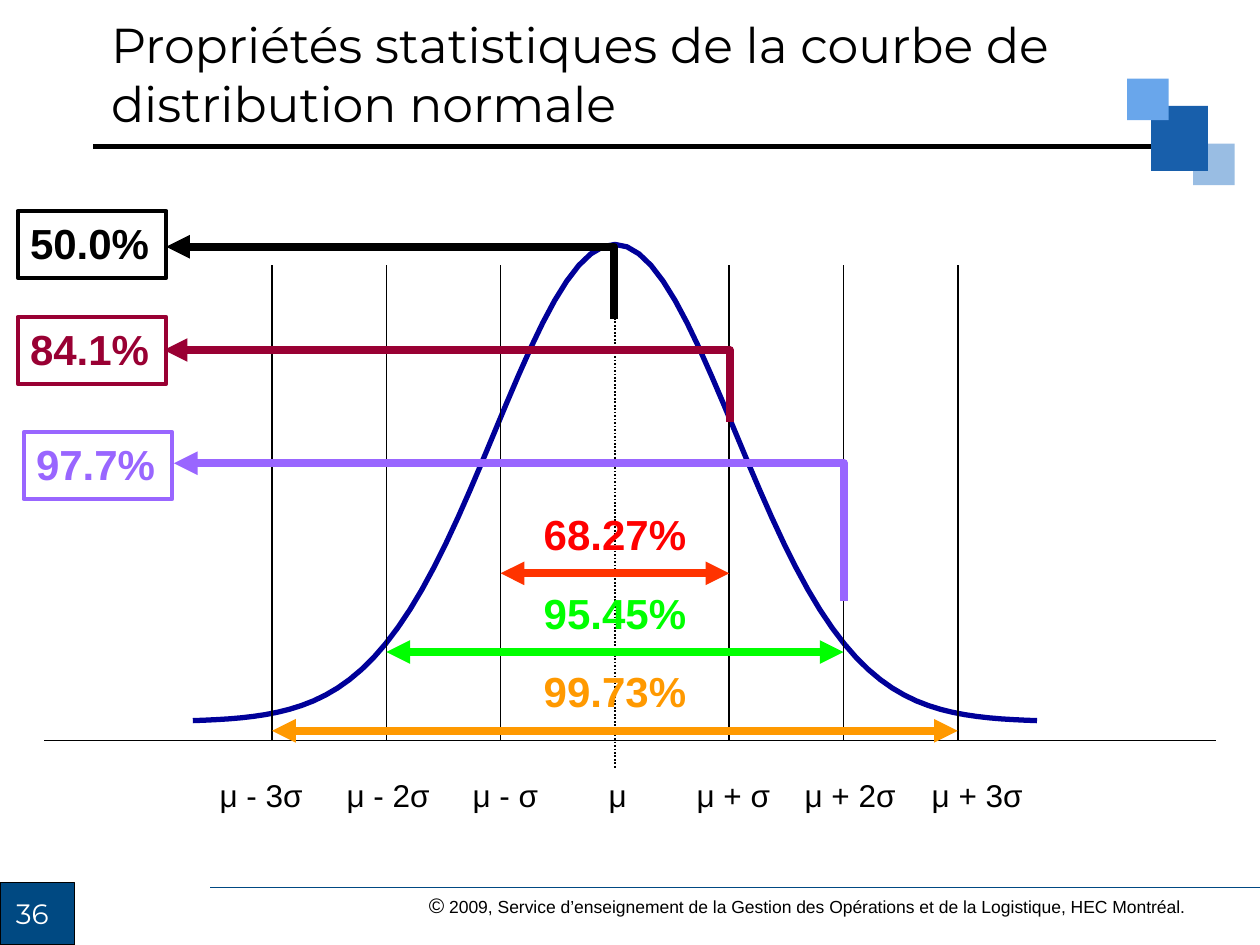
from dataclasses import dataclass
from math import exp

from lxml.etree import SubElement
from pptx import Presentation
from pptx.dml.color import RGBColor
from pptx.enum.dml import MSO_LINE
from pptx.enum.shapes import MSO_CONNECTOR, MSO_SHAPE
from pptx.enum.text import MSO_ANCHOR, PP_ALIGN
from pptx.oxml.ns import qn
from pptx.util import Pt

BLACK = "000000"
NAVY = "004982"
MEAN = 351.4        # horizontal place of the mean
SIGMA = 65.3        # gap between two grid lines
AXIS = 423.2        # height of the horizontal axis
Point = tuple[float, float]


@dataclass
class Block:
    left: float
    top: float
    width: float
    height: float
    color: str
    outline: str | None = None


@dataclass
class Span:
    sigmas: int
    text: str
    line_color: str
    text_color: str


@dataclass
class Callout:
    text: str
    color: str
    left: float
    top: float
    elbow: list[Point]


def rgb(color: str) -> RGBColor:
    return RGBColor.from_string(color)


def style_line(line, color: str, width: float, *arrow_ends: str) -> None:
    line.color.rgb = rgb(color)
    line.width = Pt(width)
    for end in arrow_ends:
        SubElement(line._get_or_add_ln(), qn(f"a:{end}"), type="triangle")


def add_line(shapes, start: Point, end: Point, color: str, width: float,
             *arrow_ends: str):
    line = shapes.add_connector(MSO_CONNECTOR.STRAIGHT, Pt(start[0]), Pt(start[1]),
                                Pt(end[0]), Pt(end[1]))
    style_line(line.line, color, width, *arrow_ends)
    SubElement(line._element.spPr, qn("a:effectLst"))
    return line


def add_path(shapes, points: list[Point], color: str, width: float,
             *arrow_ends: str) -> None:
    corners = [(Pt(x), Pt(y)) for x, y in points]
    builder = shapes.build_freeform(*corners[0])
    builder.add_line_segments(corners[1:], close=False)
    path = builder.convert_to_shape()
    path.shadow.inherit = False
    path.fill.background()
    style_line(path.line, color, width, *arrow_ends)


def add_rectangle(shapes, left: float, top: float, width: float, height: float):
    box = shapes.add_shape(MSO_SHAPE.RECTANGLE, Pt(left), Pt(top), Pt(width), Pt(height))
    box.shadow.inherit = False
    return box


def add_block(shapes, block: Block) -> None:
    box = add_rectangle(shapes, block.left, block.top, block.width, block.height)
    box.fill.solid()
    box.fill.fore_color.rgb = rgb(block.color)
    if block.outline:
        style_line(box.line, block.outline, 0.75)
    else:
        box.line.fill.background()


def add_run(para, text: str, size: float, color: str, font: str = "Arial",
            bold: bool = False) -> None:
    run = para.add_run()
    run.text = text
    run.font.size = Pt(size)
    run.font.name = font
    run.font.bold = bold
    run.font.color.rgb = rgb(color)


def add_text_box(shapes, left: float, top: float, width: float, height: float):
    box = shapes.add_textbox(Pt(left), Pt(top), Pt(width), Pt(height))
    box.text_frame.word_wrap = True
    return box.text_frame


def add_tabs(para, stops: list[float]) -> None:
    tabs = SubElement(para._p.get_or_add_pPr(), qn("a:tabLst"))
    for stop in stops:
        SubElement(tabs, qn("a:tab"), pos=str(Pt(stop)), algn="l")


def add_span(shapes, span: Span) -> None:
    height = 327.6 + 45 * (span.sigmas - 1)
    reach = span.sigmas * SIGMA
    add_line(shapes, (MEAN - reach, height), (MEAN + reach, height),
             span.line_color, 4.5, "headEnd", "tailEnd")
    frame = add_text_box(shapes, MEAN - 48, height - 40.7, 96, 36)
    frame.paragraphs[0].alignment = PP_ALIGN.CENTER
    add_run(frame.paragraphs[0], span.text, 24, span.text_color, bold=True)


def add_callout(shapes, callout: Callout) -> None:
    group = shapes.add_group_shape().shapes
    add_path(group, callout.elbow, callout.color, 4.5, "tailEnd")
    box = add_rectangle(group, callout.left, callout.top, 85, 38.2)
    box.fill.background()
    style_line(box.line, callout.color, 2.25)
    frame = box.text_frame
    frame.word_wrap = False
    frame.vertical_anchor = MSO_ANCHOR.TOP
    frame.paragraphs[0].alignment = PP_ALIGN.LEFT
    add_run(frame.paragraphs[0], callout.text, 24, callout.color, bold=True)


def bell_curve() -> list[Point]:
    half_width, steps, spread = 241.2, 70, 68.8
    offsets = [half_width * (2 * i / steps - 1) for i in range(steps + 1)]
    return [(MEAN + x, 412.4 - 272.7 * exp(-0.5 * (x / spread) ** 2)) for x in offsets]


BLOCKS = [
    Block(681.8, 82.1, 23.8, 23.8, "99BDE3"),
    Block(657.8, 60.5, 32.4, 37.2, "185FAB"),
    Block(644.1, 44.9, 23.8, 23.8, "69A6EB"),
]
SPANS = [
    Span(1, "68.27%", "FF3300", "FF0000"),
    Span(2, "95.45%", "00FF00", "00FF00"),
    Span(3, "99.73%", "FF9900", "FF9900"),
]
CALLOUTS = [
    Callout("50.0%", BLACK, 10.1, 120.6, [(350.9, 182.2), (350.9, 141), (95, 141)]),
    Callout("84.1%", "990033", 10.1, 181.2, [(417, 241), (417, 200), (93.6, 200)]),
    Callout("97.7%", "9966FF", 13.5, 247, [(482.3, 343.6), (482.3, 264.7), (99.4, 264.7)]),
]
AXIS_LABELS = ["μ - 3σ", "μ - 2σ", "μ - σ", "μ", "μ + σ", "μ + 2σ", "μ + 3σ"]
LABEL_STOPS = [72.6, 144.6, 222.3, 272.6, 334.3, 406.9]


def main() -> None:
    deck = Presentation()
    deck.slide_width, deck.slide_height = Pt(720), Pt(540)
    shapes = deck.slides.add_slide(deck.slide_layouts[6]).shapes

    # Footer with page number
    add_block(shapes, Block(0.5, 504.5, 42.3, 35.5, NAVY, BLACK))
    number = add_text_box(shapes, 2, 509, 36, 30)
    add_run(number.paragraphs[0], "36", 16, "FFFFFF", "Montserrat")
    add_line(shapes, (120.3, 507.3), (720, 507.3), NAVY, 0.75)
    footer = add_text_box(shapes, 238, 506.5, 462.5, 21.6).paragraphs[0]
    add_run(footer, "©", 12, BLACK)
    add_run(footer, " 2009, Service d’enseignement de la Gestion des Opérations "
            "et de la Logistique, HEC Montréal.", 10, BLACK)

    # Title with rule and squares
    add_line(shapes, (53.3, 83.7), (677.5, 83.7), BLACK, 2.75)
    for block in BLOCKS:
        add_block(shapes, block)
    title = add_text_box(shapes, 56.4, 0, 593.3, 83.5)
    title.vertical_anchor = MSO_ANCHOR.MIDDLE
    add_run(title.paragraphs[0], "Propriétés statistiques de la courbe de "
            "distribution normale", 28, BLACK, "Montserrat")

    # Curve, axis and grid
    add_path(shapes, bell_curve(), "000099", 3)
    add_line(shapes, (25.2, AXIS), (694.8, AXIS), BLACK, 1)
    mean_line = add_line(shapes, (MEAN, 144), (MEAN, 439.2), BLACK, 1)
    mean_line.line.dash_style = MSO_LINE.ROUND_DOT
    for step in (-3, -2, -1, 1, 2, 3):
        place = MEAN + step * SIGMA
        add_line(shapes, (place, AXIS), (place, 151.2), BLACK, 1)
    labels = add_text_box(shapes, 118.4, 440, 520, 28.8).paragraphs[0]
    add_tabs(labels, LABEL_STOPS)
    add_run(labels, "\t".join(AXIS_LABELS), 18, BLACK)

    # Shares around the mean, then cumulative shares
    for span in SPANS:
        add_span(shapes, span)
    for callout in CALLOUTS:
        add_callout(shapes, callout)

    deck.save("out.pptx")


if __name__ == "__main__":
    main()
